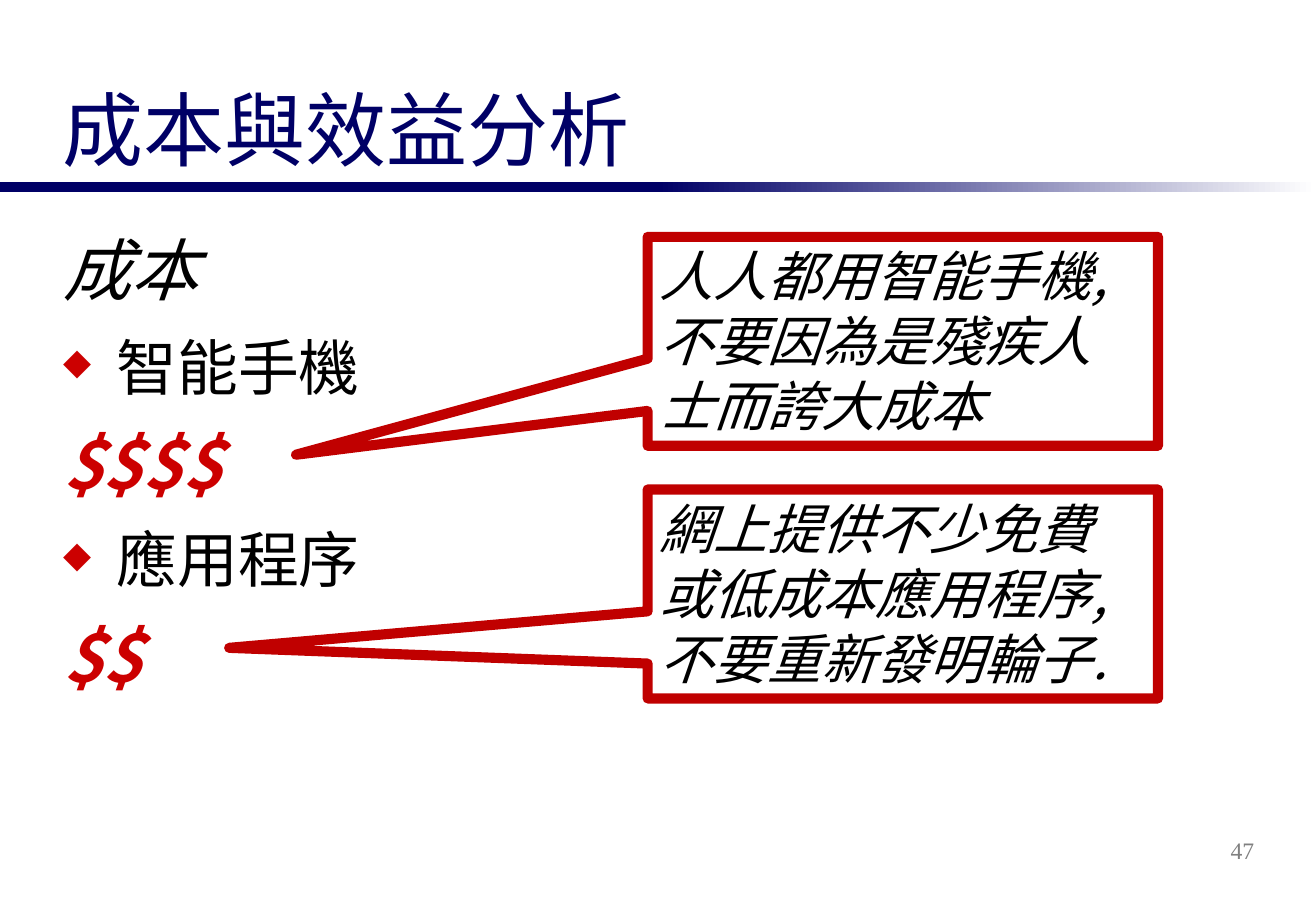
import pptx
import pptx.util
import pptx.dml.color
import pptx.enum.shapes
import pptx.enum.text
import lxml.etree

Inches, Pt = pptx.util.Inches, pptx.util.Pt
RGBColor = pptx.dml.color.RGBColor
SHAPE = pptx.enum.shapes.MSO_SHAPE
ANCHOR = pptx.enum.text.MSO_ANCHOR
ALIGN = pptx.enum.text.PP_ALIGN

NAVY = RGBColor(0x00, 0x00, 0x66)
WHITE = RGBColor(0xFF, 0xFF, 0xFF)
BLACK = RGBColor(0x00, 0x00, 0x00)
GRAY = RGBColor(0x80, 0x80, 0x80)
RED = RGBColor(0xCC, 0x00, 0x00)
DARK_RED = RGBColor(0xC0, 0x00, 0x00)
CJK_FONT = "Noto Sans CJK SC"
A = "{http://schemas.openxmlformats.org/drawingml/2006/main}"


def write(p, text, size, color, name=CJK_FONT, **style):
    """Add one styled run to a paragraph."""
    r = p.add_run()
    r.text = text
    r.font.color.rgb = color
    for key, value in {"size": Pt(size), "name": name, **style}.items():
        setattr(r.font, key, value)
    lxml.etree.SubElement(r.font._element, A + "ea", typeface=name)


def add_text(left, top, width, height, anchor=ANCHOR.TOP):
    """Add a wrapping text box and return its text frame."""
    s = slide.shapes.add_textbox(Inches(left), Inches(top), Inches(width), Inches(height))
    tf = s.text_frame
    tf.word_wrap = True
    tf.vertical_anchor = anchor
    return tf


prs = pptx.Presentation()
prs.slide_width, prs.slide_height = Inches(10.83), Inches(7.5)
slide = prs.slides.add_slide(prs.slide_layouts[6])

# Rule under the title: solid half, then fading half
halves = []
for left in (0, 5.41):
    s = slide.shapes.add_shape(SHAPE.RECTANGLE, Inches(left), Inches(1.5), Inches(5.42), Inches(0.08))
    s.shadow.inherit = False
    s.line.fill.background()
    halves.append(s)
solid, fading = halves
solid.fill.solid()
solid.fill.fore_color.rgb = NAVY
fading.fill.gradient()
fading.fill.gradient_angle = 0
for stop, position, color in zip(fading.fill.gradient_stops, (0, 1), (NAVY, WHITE)):
    stop.position = position
    stop.color.rgb = color

# Page number
p = add_text(8.16, 6.75, 2.26, 0.5, ANCHOR.MIDDLE).paragraphs[0]
p.alignment = ALIGN.RIGHT
write(p, "47", 14, GRAY, "Times New Roman")

# Title
tf = add_text(0.42, 0.29, 10, 1.21, ANCHOR.BOTTOM)
write(tf.paragraphs[0], "成本與效益分析", 48, NAVY)

# Cost lists
heading = {"size": 40, "color": BLACK, "italic": True}
item = {"size": 36, "color": BLACK}
price = {"size": 40, "color": RED, "bold": True, "italic": True}
cost_lists = [
    (1.83, 2.33, [("成本", heading), ("智能手機", item), ("$$$$", price)]),
    (4.25, 1.67, [("應用程序", item), ("$$", price)]),
]
for top, height, lines in cost_lists:
    tf = add_text(0.42, top, 4.92, height)
    for i, (text, style) in enumerate(lines):
        p = tf.add_paragraph() if i else tf.paragraphs[0]
        if i:
            p.space_before = Pt(12)
        pPr = p._p.get_or_add_pPr()
        pPr.set("marL", str(Inches(0.44)))
        pPr.set("indent", str(-Inches(0.44)))
        if style is item:
            clr = lxml.etree.SubElement(pPr, A + "buClr")
            lxml.etree.SubElement(clr, A + "srgbClr", val=str(RED))
            lxml.etree.SubElement(pPr, A + "buSzPct", val="60000")
            lxml.etree.SubElement(pPr, A + "buChar", char="◆")
        write(p, text, **style)

# Callouts pointing at the prices
callouts = [
    (1.95, (-1.189, 0.543), ["人人都用智能手機,", "不要因為是殘疾人士而誇大成本"]),
    (4.03, (-1.32, 0.258), ["網上提供不少免費或低成本應用程序,", "不要重新發明輪子."]),
]
for top, tip, lines in callouts:
    s = slide.shapes.add_shape(SHAPE.RECTANGULAR_CALLOUT, Inches(5.33), Inches(top), Inches(4.2), Inches(1.72))
    s.shadow.inherit = False
    s.adjustments[0], s.adjustments[1] = tip
    s.fill.background()
    s.line.color.rgb = DARK_RED
    s.line.width = Pt(6)
    tf = s.text_frame
    tf.word_wrap = True
    tf.vertical_anchor = ANCHOR.TOP
    tf.auto_size = pptx.enum.text.MSO_AUTO_SIZE.SHAPE_TO_FIT_TEXT
    for i, text in enumerate(lines):
        p = tf.add_paragraph() if i else tf.paragraphs[0]
        p.alignment = ALIGN.LEFT
        write(p, text, 32, BLACK, italic=True)

prs.save("out.pptx")
